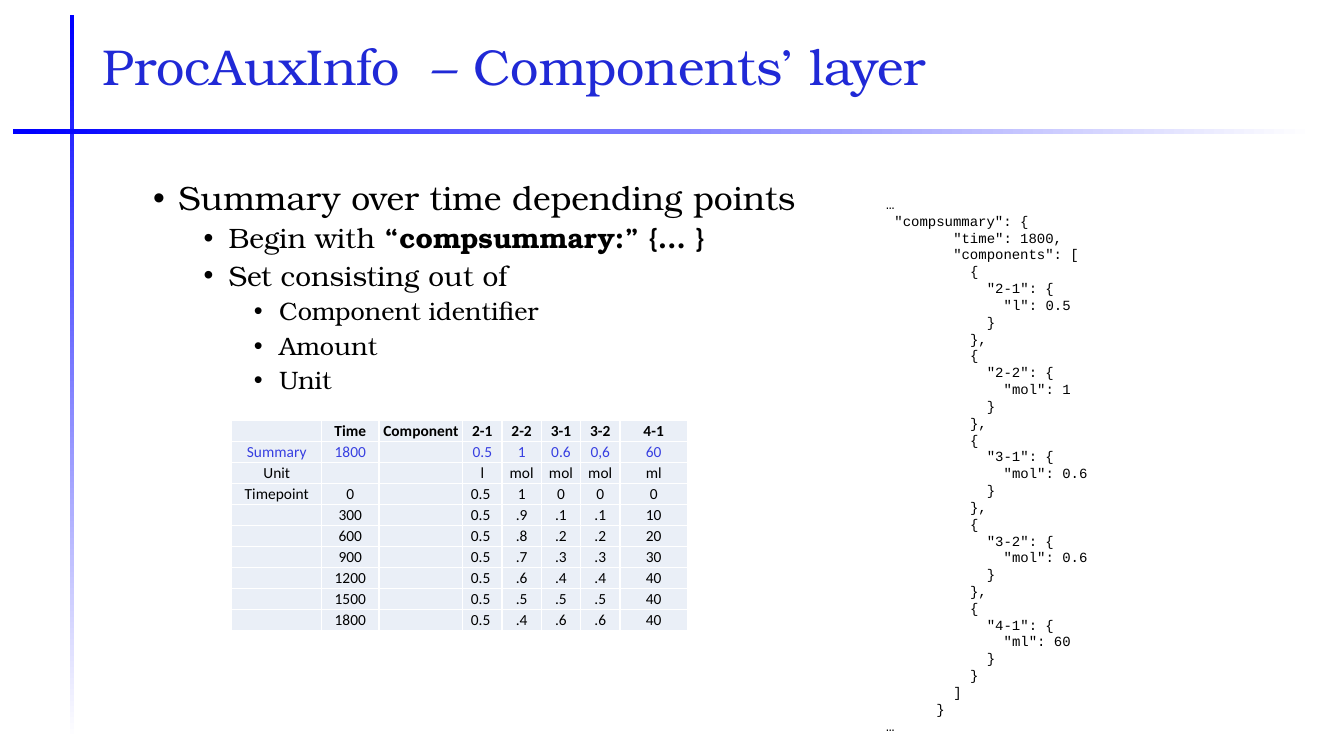
import pptx
import pptx.util
import pptx.dml.color
import pptx.enum.shapes
import pptx.enum.text
import pptx.oxml
import pptx.oxml.ns
from lxml import etree

PX = 9144  # 100 px to the inch
SERIF, SANS, MONO = "TeX Gyre Bonum", "Calibri", "Courier New"
BLACK, WHITE, BLUE = "000000", "FFFFFF", "0000FF"
TITLE_BLUE, SUMMARY_BLUE, CELL_FILL = "2029D6", "373FE1", "EAEFF7"
ALIGN, ANCHOR = pptx.enum.text.PP_ALIGN, pptx.enum.text.MSO_ANCHOR

BULLETS = [
    (1, 24, [("Summary over time depending points", False)]),
    (2, 20, [("Begin with ", False), ("“compsummary:” {… }", True)]),
    (2, 20, [("Set consisting out of", False)]),
    (3, 18, [("Component identifier", False)]),
    (3, 18, [("Amount", False)]),
    (3, 18, [("Unit", False)]),
]
COMPONENTS = [("2-1", "l", "0.5"), ("2-2", "mol", "1"), ("3-1", "mol", "0.6"),
              ("3-2", "mol", "0.6"), ("4-1", "ml", "60")]
COLUMNS = [89, 57, 83, 39, 39, 39, 39, 67]
ROWS = [row.split("|") for row in (
    "|Time|Component|2-1|2-2|3-1|3-2|4-1",
    "Summary|1800||0.5|1|0.6|0,6|60",
    "Unit|||l|mol|mol|mol|ml",
    "Timepoint|0||0.5 |1|0|0|0",
    "|300||0.5 |.9|.1|.1|10",
    "|600||0.5 |.8|.2|.2|20",
    "|900||0.5 |.7|.3|.3|30",
    "|1200||0.5 |.6|.4|.4|40",
    "|1500||0.5 |.5|.5|.5|40",
    "|1800||0.5 |.4|.6|.6|40",
)]


def px(*lengths):
    return [pptx.util.Emu(n * PX) for n in lengths]


def rgb(color):
    return pptx.dml.color.RGBColor.from_string(color)


def add_text(p, text, size=18, font=SERIF, color=BLACK, bold=False):
    r = p.add_run()
    r.text = text
    r.font.size = pptx.util.Pt(size)
    r.font.name = font
    r.font.bold = bold
    r.font.color.rgb = rgb(color)


def next_paragraph(tf, index):
    return tf.paragraphs[0] if index == 0 else tf.add_paragraph()


def add_bar(s, box, angle):
    """A frame line fading from blue to white."""
    sp = s.shapes.add_shape(pptx.enum.shapes.MSO_SHAPE.ROUNDED_RECTANGLE, *px(*box))
    sp.shadow.inherit = False
    sp.line.fill.background()
    sp.fill.gradient()
    sp.fill.gradient_angle = angle
    start, end = sp.fill.gradient_stops
    start.color.rgb, end.color.rgb = rgb(WHITE), rgb(BLUE)
    end.position = 0.99


def add_frame(s, x, y, w, h):
    add_bar(s, (x + 56, y, 5, h), 90)
    add_bar(s, (x, y + 113, w, 5), 180)


def add_title(s, x, y, w, h):
    sp = s.shapes.title
    sp.left, sp.top, sp.width, sp.height = px(x, y, w, h)
    tf = sp.text_frame
    tf.vertical_anchor = ANCHOR.MIDDLE
    p = tf.paragraphs[0]
    p.alignment = ALIGN.LEFT
    p.line_spacing = 0.9
    add_text(p, "ProcAuxInfo  – Components’ layer", size=36, color=TITLE_BLUE)


def add_bullets(s, x, y, w, h):
    tf = s.shapes.add_textbox(*px(x, y, w, h)).text_frame
    tf.word_wrap = True
    for i, (level, size, runs) in enumerate(BULLETS):
        p = next_paragraph(tf, i)
        p.level = level
        p.line_spacing = 0.9
        p.space_before = pptx.util.Pt(5)
        pPr = p._p.get_or_add_pPr()
        pPr.set("marL", str((25 + 50 * level) * PX))
        pPr.set("indent", str(-25 * PX))
        etree.SubElement(pPr, pptx.oxml.ns.qn("a:buFont"), typeface="Arial")
        etree.SubElement(pPr, pptx.oxml.ns.qn("a:buChar"), char="•")
        for text, bold in runs:
            add_text(p, text, size=size, bold=bold)


def code_lines():
    """Pairs of indent, in characters, and text."""
    lines = [(0, "…"), (1, '"compsummary": {'), (8, '"time": 1800,'), (8, '"components": [')]
    for name, unit, amount in COMPONENTS:
        closing = "}" if name == COMPONENTS[-1][0] else "},"
        lines += [(10, "{"), (12, f'"{name}": {{'), (14, f'"{unit}": {amount}'),
                  (12, "}"), (10, closing)]
    return lines + [(8, "]"), (6, "}"), (0, "…")]


def add_code(s, x, y, w, h):
    tf = s.shapes.add_textbox(*px(x, y, w, h)).text_frame
    tf.word_wrap = True
    tf.auto_size = pptx.enum.text.MSO_AUTO_SIZE.SHAPE_TO_FIT_TEXT
    char_width = pptx.util.Pt(6)
    for i, (indent, text) in enumerate(code_lines()):
        p = next_paragraph(tf, i)
        p._p.get_or_add_pPr().set("marL", str(indent * char_width))
        add_text(p, text, size=10, font=MONO)


def format_cell(cell):
    cell.margin_left, cell.margin_right, cell.margin_top, cell.margin_bottom = px(1, 1, 1, 0)
    cell.vertical_anchor = ANCHOR.MIDDLE
    tcPr = cell._tc.get_or_add_tcPr()
    for side in "LRTB":
        tcPr.append(pptx.oxml.parse_xml(
            f'<a:ln{side} {pptx.oxml.ns.nsdecls("a")} w="12700"><a:solidFill>'
            f'<a:srgbClr val="{WHITE}"/></a:solidFill></a:ln{side}>'))
    cell.fill.solid()
    cell.fill.fore_color.rgb = rgb(CELL_FILL)


def add_amounts_table(s, x, y, w, h):
    table = s.shapes.add_table(len(ROWS), len(COLUMNS), *px(x, y, w, h)).table
    table.first_row = table.horz_banding = False
    for column, width in zip(table.columns, px(*COLUMNS)):
        column.width = width
    for i, texts in enumerate(ROWS):
        table.rows[i].height = px(h)[0] // len(ROWS)
        for j, text in enumerate(texts):
            cell = table.cell(i, j)
            format_cell(cell)
            p = cell.text_frame.paragraphs[0]
            p.alignment = ALIGN.CENTER
            if text:
                add_text(p, text, size=11, font=SANS, bold=i == 0,
                         color=SUMMARY_BLUE if i == 1 else BLACK)
            else:  # keeps empty cells from stretching their row
                etree.SubElement(p._p, pptx.oxml.ns.qn("a:endParaRPr"), sz="1100")


def main():
    prs = pptx.Presentation()
    prs.slide_width, prs.slide_height = px(1333, 750)
    s = prs.slides.add_slide(prs.slide_layouts[5])
    add_frame(s, 13, 15, 1291, 719)
    add_title(s, 92, 15, 1150, 107)
    add_bullets(s, 92, 175, 751, 499)
    add_code(s, 869, 189, 416, 549)
    add_amounts_table(s, 230, 417, 451, 209)
    prs.save("out.pptx")


if __name__ == "__main__":
    main()
